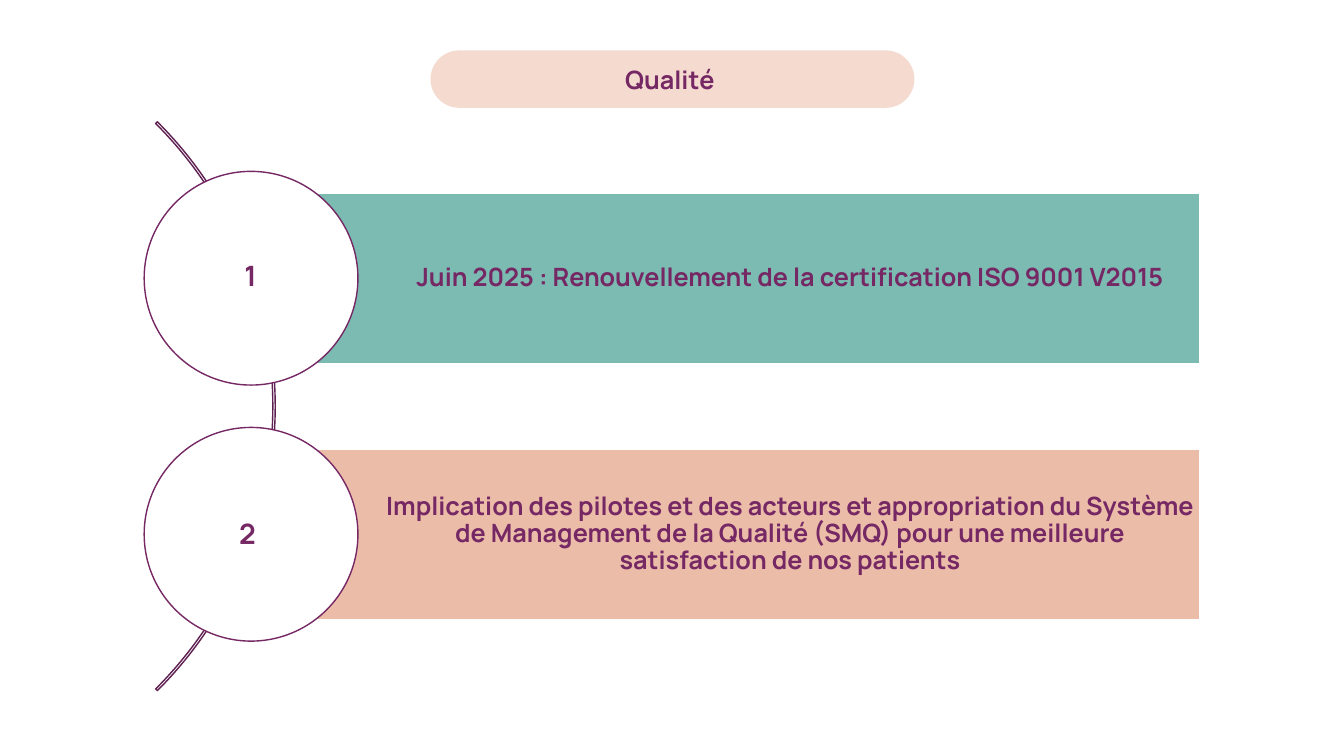
from lxml import etree
from pptx import Presentation, util as u
from pptx.dml.color import RGBColor
from pptx.enum import shapes, text
from pptx.oxml.ns import qn

TITLE = "Qualité "
# number, its box (left, top), bar colour, statement
ITEMS = [
    ("1", (2.09, 2.52), "7BBBB2",
     "Juin 2025 : Renouvellement de la certification ISO 9001 V2015"),
    ("2", (2.06, 5.08), "EBBDA9",
     "Implication des pilotes et des acteurs et appropriation du Système "
     "de Management de la Qualité (SMQ) pour une meilleure satisfaction "
     "de nos patients"),
]
PLUM, DARK, PEACH, WHITE = "752864", "5E2050", "EBBDA9", "FFFFFF"
FONT = "Manrope"
WIDE, HIGH = 13.33, 7.5
LEFT, RIGHT = 2.48, 11.9      # bar edges
MID, STEP = 2.76, 2.54        # first row centre and row pitch
BAR, DISC = 1.69, 2.12        # bar height, disc diameter
ARC = 7.98

KIND = shapes.MSO_SHAPE


def rgb(code):
    return RGBColor.from_string(code)


def write(shape, words, size):
    frame = shape.text_frame
    frame.word_wrap = True
    frame.text = words
    para = frame.paragraphs[0]
    para.alignment = text.PP_ALIGN.CENTER
    font = para.font
    font.name, font.size, font.bold = FONT, u.Pt(size), True
    font.color.rgb = rgb(PLUM)
    return frame


def draw(slide, kind, box, fill=None, line=None):
    shape = slide.shapes.add_shape(kind, *map(u.Inches, box))
    shape.shadow.inherit = False
    if fill:
        shape.fill.solid()
        shape.fill.fore_color.rgb = rgb(fill)
    else:
        shape.fill.background()
    if line:
        shape.line.color.rgb = rgb(line)
        shape.line.width = u.Pt(1)
    else:
        shape.line.fill.background()
    return shape


def fade(shape, share):
    """Set the opacity of a solid fill, in percent."""
    color = shape.fill._xPr.find(qn("a:solidFill"))[0]
    etree.SubElement(color, qn("a:alpha")).set("val", str(share * 1000))


def add_title(slide):
    wide = 4.8
    pill = draw(slide, KIND.ROUNDED_RECTANGLE, (4.27, 0.5, wide, 0.57), PEACH)
    pill.adjustments[0] = 0.5
    fade(pill, 55)
    write(pill, TITLE, 18).vertical_anchor = text.MSO_ANCHOR.MIDDLE


def add_arc(slide):
    centre = MID + STEP * (len(ITEMS) - 1) / 2
    arc = draw(slide, KIND.BLOCK_ARC, (-5.25, centre - ARC / 2, ARC, ARC),
               line=DARK)
    for i, value in enumerate((189, 27, 0.3 / 100)):
        arc.adjustments[i] = value


def add_row(slide, row, fill, words):
    mid = MID + STEP * row
    bar = draw(slide, KIND.RECTANGLE,
               (LEFT, mid - BAR / 2, RIGHT - LEFT, BAR), fill, WHITE)
    frame = write(bar, words, 18)
    frame.vertical_anchor = text.MSO_ANCHOR.MIDDLE
    frame.margin_left = u.Inches(1.34)
    frame.margin_right = u.Inches(0.05)
    frame.paragraphs[0].line_spacing = 0.9
    draw(slide, KIND.OVAL, (LEFT + 0.01 - DISC / 2, mid - DISC / 2, DISC, DISC),
         WHITE, PLUM)


def main():
    deck = Presentation()
    deck.slide_width, deck.slide_height = u.Inches(WIDE), u.Inches(HIGH)
    slide = deck.slides.add_slide(deck.slide_layouts[6])
    add_title(slide)
    add_arc(slide)
    for row, (number, spot, fill, words) in enumerate(ITEMS):
        add_row(slide, row, fill, words)
        label = slide.shapes.add_textbox(*map(u.Inches, (*spot, 0.79, 0.44)))
        write(label, number, 20)
    deck.save("out.pptx")


if __name__ == "__main__":
    main()
